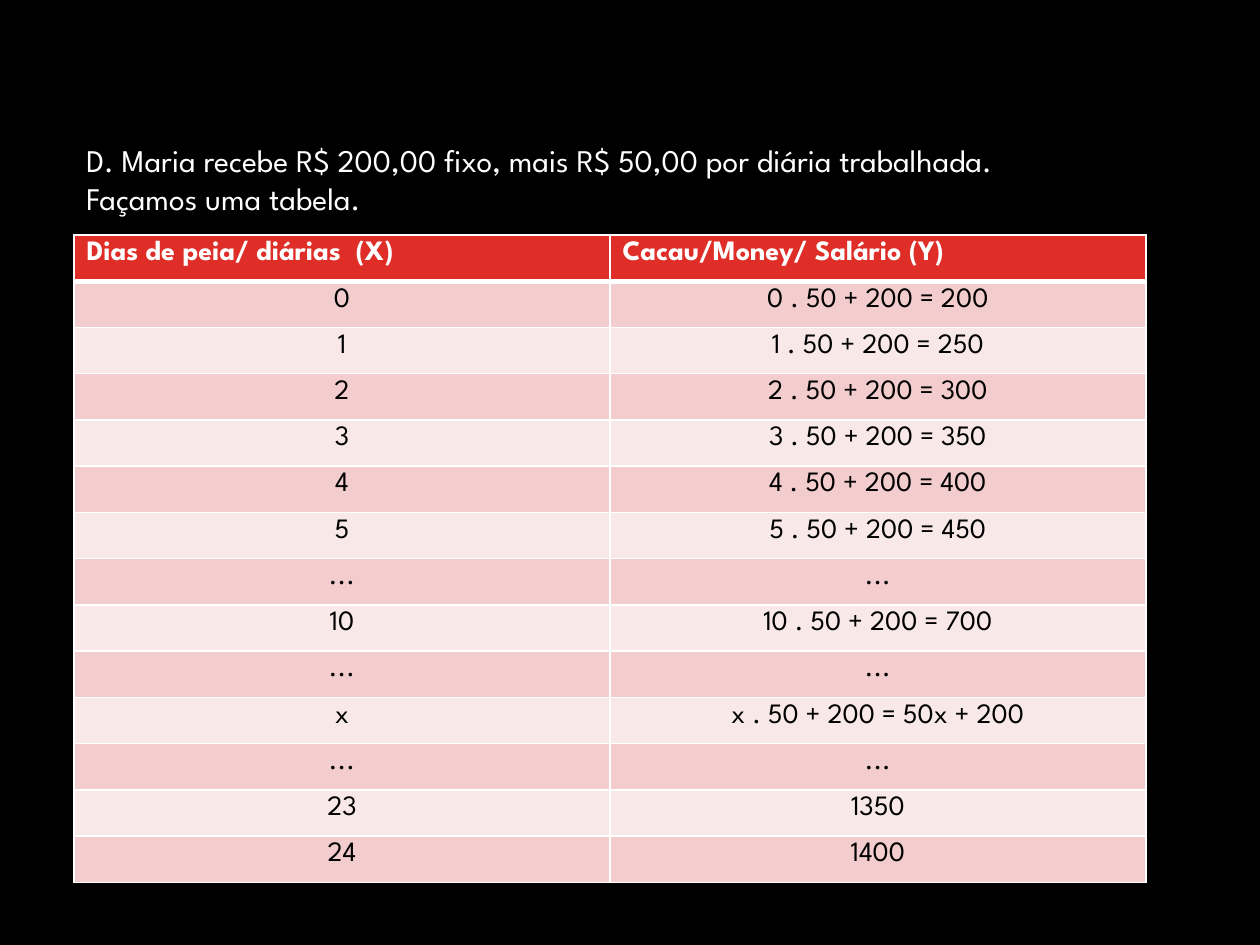
from dataclasses import dataclass

from lxml.etree import SubElement
from pptx import Presentation
from pptx.dml.color import RGBColor
from pptx.enum.text import MSO_AUTO_SIZE, PP_ALIGN
from pptx.oxml.ns import qn
from pptx.util import Emu, Pt

PX = 914400 // 126


@dataclass(frozen=True)
class Theme:
    font: str = "League Spartan"
    background: str = "000000"
    light: str = "FFFFFF"
    dark: str = "000000"
    header: str = "DF2E28"
    bands: tuple = ("F3CDCD", "F9E8E8")
    intro_size: int = 18
    table_size: int = 16
    thin: int = 1
    thick: int = 3


def px(length):
    return Emu(length * PX)


class Page:
    def __init__(self, deck, theme):
        self.theme = theme
        self.slide = deck.slides.add_slide(deck.slide_layouts[6])
        fill = self.slide.background.fill
        fill.solid()
        fill.fore_color.rgb = RGBColor.from_string(theme.background)

    def add_span(self, para, text, size, color, bold=False):
        span = para.add_run()
        span.text = text
        span.font.name = self.theme.font
        span.font.size = Pt(size)
        span.font.bold = bold
        span.font.color.rgb = RGBColor.from_string(color)

    def add_text(self, left, top, width, height, lines):
        box = self.slide.shapes.add_textbox(px(left), px(top), px(width), px(height))
        frame = box.text_frame
        frame.word_wrap = True
        frame.auto_size = MSO_AUTO_SIZE.SHAPE_TO_FIT_TEXT
        for index, line in enumerate(lines):
            para = frame.add_paragraph() if index else frame.paragraphs[0]
            self.add_span(para, line, self.theme.intro_size, self.theme.light)

    def add_borders(self, cell, top, bottom):
        properties = cell._tc.get_or_add_tcPr()
        widths = {"a:lnL": self.theme.thin, "a:lnR": self.theme.thin, "a:lnT": top, "a:lnB": bottom}
        for index, (side, width) in enumerate(widths.items()):
            line = properties.makeelement(qn(side), {"w": str(Pt(width))})
            properties.insert(index, line)
            color = SubElement(SubElement(line, qn("a:solidFill")), qn("a:srgbClr"))
            color.set("val", self.theme.light)

    def add_table(self, left, top, width, row_height, rows):
        theme = self.theme
        table = self.slide.shapes.add_table(
            len(rows), len(rows[0]), px(left), px(top), px(width), px(row_height * len(rows))
        ).table
        for row, values in enumerate(rows):
            is_header = row == 0
            for column, value in enumerate(values):
                cell = table.cell(row, column)
                cell.fill.solid()
                fill = theme.header if is_header else theme.bands[(row - 1) % 2]
                cell.fill.fore_color.rgb = RGBColor.from_string(fill)
                self.add_borders(
                    cell,
                    top=theme.thick if row == 1 else theme.thin,
                    bottom=theme.thick if is_header else theme.thin,
                )
                para = cell.text_frame.paragraphs[0]
                para.alignment = PP_ALIGN.LEFT if is_header else PP_ALIGN.CENTER
                color = theme.light if is_header else theme.dark
                self.add_span(para, value, theme.table_size, color, bold=is_header)


def pay_row(days):
    return f"{days}", f"{days} . 50 + 200 = {days * 50 + 200}"


def main():
    deck = Presentation()
    deck.slide_width, deck.slide_height = px(1260), px(945)
    page = Page(deck, Theme())

    # Problem statement
    page.add_text(74, 135, 1062, 89, [
        "D. Maria recebe R$ 200,00 fixo, mais R$ 50,00 por diária trabalhada.",
        "Façamos uma tabela.",
    ])

    # Days worked against salary
    gap = ("...", "...")
    page.add_table(74, 235, 1072, 46, [
        ("Dias de peia/ diárias  (X)", "Cacau/Money/ Salário (Y)"),
        *[pay_row(days) for days in range(6)],
        gap,
        pay_row(10),
        gap,
        ("x", "x . 50 + 200 = 50x + 200"),
        gap,
        ("23", "1350"),
        ("24", "1400"),
    ])

    deck.save("out.pptx")


if __name__ == "__main__":
    main()
